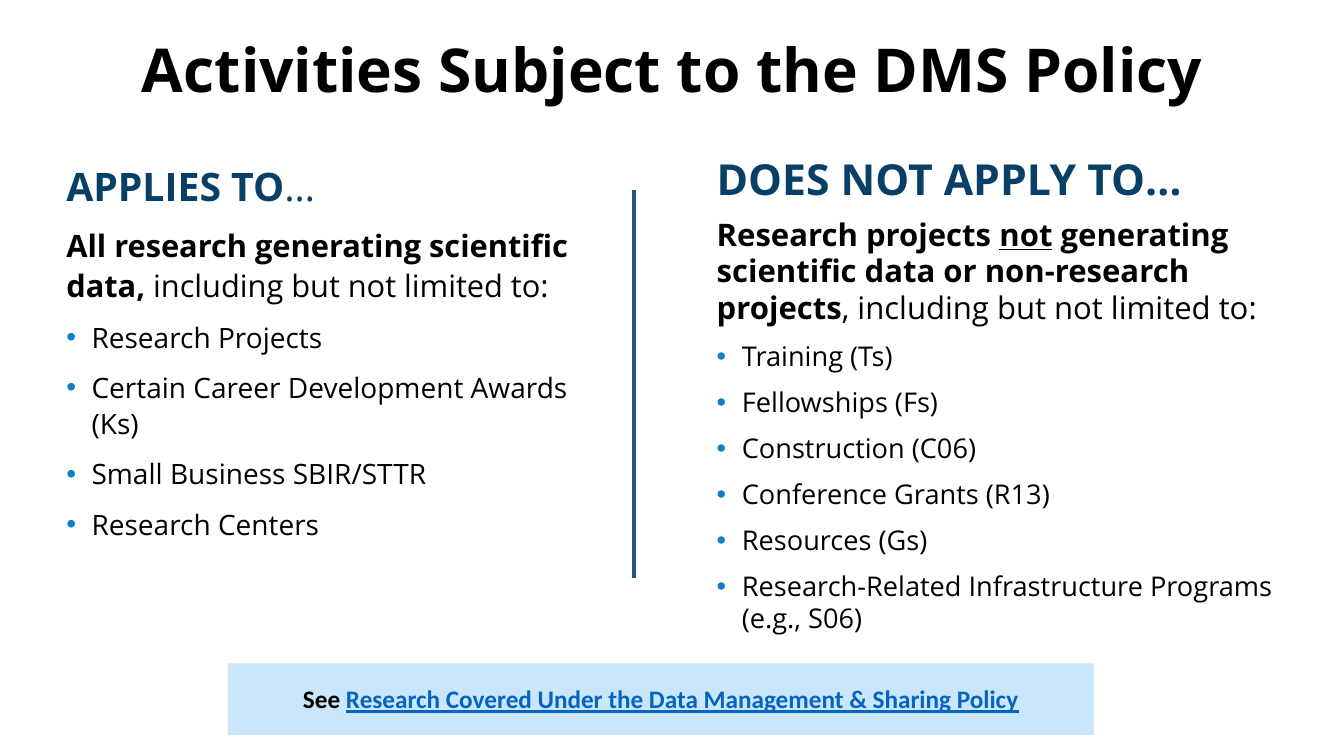
from dataclasses import dataclass

from lxml import etree
from pptx import Presentation
from pptx.dml.color import RGBColor
from pptx.enum.shapes import MSO_CONNECTOR, MSO_SHAPE
from pptx.enum.text import MSO_ANCHOR, PP_ALIGN
from pptx.oxml.ns import qn
from pptx.util import Inches, Pt

STRAIGHT = MSO_CONNECTOR.STRAIGHT
RECTANGLE = MSO_SHAPE.RECTANGLE
TOP, MIDDLE = MSO_ANCHOR.TOP, MSO_ANCHOR.MIDDLE
LEFT, CENTER = PP_ALIGN.LEFT, PP_ALIGN.CENTER


@dataclass(frozen=True)
class Theme:
    font: str = "Open Sans"
    note_font: str = "Calibri"
    ink: str = "000000"
    heading: str = "073F67"
    bullet: str = "0F7FC9"
    divider: str = "20558A"
    note_fill: str = "C9E6FB"
    link: str = "0563C1"
    title_size: float = 43.2
    note_size: float = 18


@dataclass(frozen=True)
class ColumnStyle:
    """Type sizes and line spacing of one text column."""
    heading_size: float
    intro_size: float
    item_size: float
    heading_spacing: float
    body_spacing: float


class SlideBuilder:
    def __init__(self, page, theme):
        self.page = page
        self.theme = theme

    def text_box(self, left, top, width, height, anchor=TOP):
        box = self.page.shapes.add_textbox(
            Inches(left), Inches(top), Inches(width), Inches(height))
        box.text_frame.word_wrap = True
        box.text_frame.vertical_anchor = anchor
        return box.text_frame

    def add_spans(self, para, spans, size, color, font=None, align=LEFT):
        """Fill a paragraph from (text, style) pairs; style letters: b bold, u underline, l link."""
        para.alignment = align
        for text, style in spans:
            span = para.add_run()
            span.text = text
            span.font.name = font or self.theme.font
            span.font.size = Pt(size)
            span.font.bold = "b" in style
            span.font.underline = "u" in style
            shade = self.theme.link if "l" in style else color
            span.font.color.rgb = RGBColor.from_string(shade)

    def add_bullet(self, para):
        properties = para._p.get_or_add_pPr()
        properties.set("marL", str(Inches(0.25)))
        properties.set("indent", str(-Inches(0.25)))
        bullet_color = etree.SubElement(properties, qn("a:buClr"))
        etree.SubElement(bullet_color, qn("a:srgbClr"), val=self.theme.bullet)
        etree.SubElement(properties, qn("a:buFont"), typeface="Arial")
        etree.SubElement(properties, qn("a:buChar"), char="•")

    def title(self, text):
        frame = self.text_box(0.92, 0, 11.5, 1.45, MIDDLE)
        para = frame.paragraphs[0]
        para.line_spacing = 0.9
        self.add_spans(para, [(text, "b")], self.theme.title_size,
                       self.theme.ink, align=CENTER)

    def column(self, bounds, style, heading, intro, items):
        frame = self.text_box(*bounds)
        para = frame.paragraphs[0]
        para.line_spacing = style.heading_spacing
        self.add_spans(para, heading, style.heading_size, self.theme.heading)
        self.body_paragraph(frame, intro, style.intro_size, style)
        for item in items:
            para = self.body_paragraph(frame, [(item, "")], style.item_size, style)
            self.add_bullet(para)

    def body_paragraph(self, frame, spans, size, style):
        para = frame.add_paragraph()
        para.line_spacing = style.body_spacing
        para.space_before = Pt(10)
        self.add_spans(para, spans, size, self.theme.ink)
        return para

    def divider(self, x, top, bottom):
        line = self.page.shapes.add_connector(
            STRAIGHT, Inches(x), Inches(top), Inches(x), Inches(bottom))
        line.line.color.rgb = RGBColor.from_string(self.theme.divider)
        line.line.width = Pt(3)
        etree.SubElement(line._element.spPr, qn("a:effectLst"))

    def note(self, left, top, width, height, spans):
        box = self.page.shapes.add_shape(
            RECTANGLE, Inches(left), Inches(top), Inches(width), Inches(height))
        box.shadow.inherit = False
        box.fill.solid()
        box.fill.fore_color.rgb = RGBColor.from_string(self.theme.note_fill)
        box.line.fill.background()
        frame = box.text_frame
        frame.word_wrap = True
        frame.vertical_anchor = TOP
        frame.margin_top = frame.margin_bottom = Inches(0.2)
        self.add_spans(frame.paragraphs[0], spans, self.theme.note_size,
                       self.theme.ink, self.theme.note_font, CENTER)


def main():
    deck = Presentation()
    deck.slide_width, deck.slide_height = Inches(13.33), Inches(7.5)
    page = deck.slides.add_slide(deck.slide_layouts[6])
    builder = SlideBuilder(page, Theme())

    builder.title("Activities Subject to the DMS Policy")
    builder.column(
        (0.56, 1.61, 5.54, 5.35),
        ColumnStyle(28, 22, 20, 0.9, 1.08),
        [("APPLIES TO", "b"), ("…", "")],
        [("All research generating scientific data, ", "b"),
         ("including but not limited to:", "")],
        ["Research Projects",
         "Certain Career Development Awards (Ks)",
         "Small Business SBIR/STTR",
         "Research Centers"])
    builder.column(
        (7.01, 1.61, 6.1, 4.81),
        ColumnStyle(30.5, 22.2, 19.4, 0.7, 0.98),
        [("DOES NOT APPLY TO…", "b")],
        [("Research projects ", "b"),
         ("not", "bu"),
         (" generating scientific data or non-research projects", "b"),
         (", including but not limited to:", "")],
        ["Training (Ts)",
         "Fellowships (Fs)",
         "Construction (C06)",
         "Conference Grants (R13)",
         "Resources (Gs)",
         "Research-Related Infrastructure Programs (e.g., S06)"])
    builder.divider(6.29, 1.89, 5.73)
    builder.note(
        2.26, 6.58, 8.59, 0.71,
        [("See ", "b"),
         ("Research Covered Under the Data Management & Sharing Policy", "bul")])

    deck.save("out.pptx")


if __name__ == "__main__":
    main()
